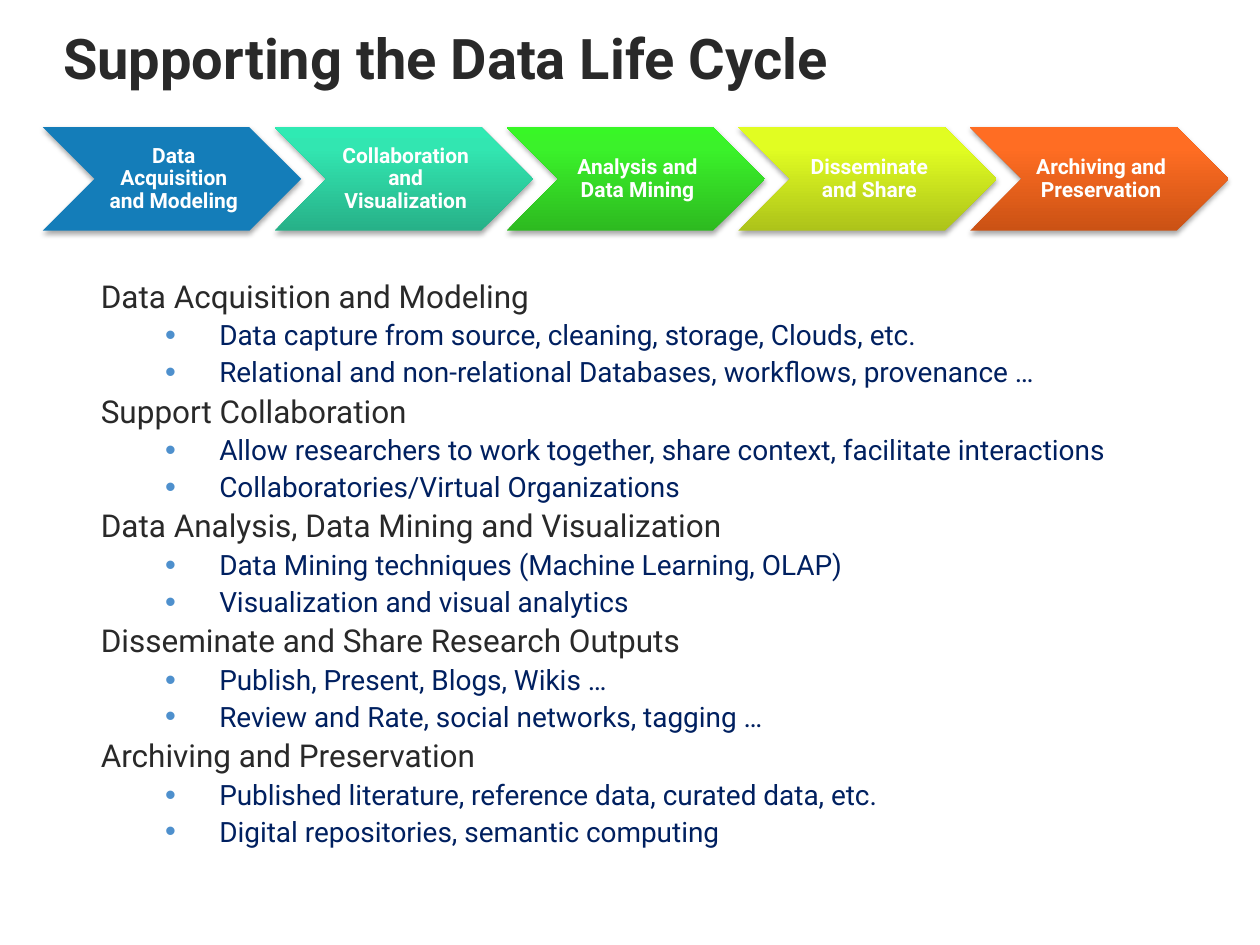
import copy
from dataclasses import dataclass

import lxml.etree
import pptx
import pptx.dml.color
import pptx.enum.shapes
import pptx.enum.text
import pptx.oxml.ns
import pptx.util

Inches = pptx.util.Inches
Pt = pptx.util.Pt
qn = pptx.oxml.ns.qn
Anchor = pptx.enum.text.MSO_ANCHOR
Align = pptx.enum.text.PP_ALIGN


@dataclass(frozen=True)
class Theme:
    font: str = "Roboto"
    dark: str = "292929"
    navy: str = "002060"
    white: str = "FFFFFF"
    bullet: str = "4E90CD"
    shade: str = "000000"
    title: int = 32
    head: int = 18
    item: int = 16
    label: int = 12
    leading: float = 0.9


THEME = Theme()

# Label and fill: one colour, or the gradient stops from bottom to top
STEPS = [
    ("Data Acquisition and Modeling", ["147DB9"]),
    ("Collaboration and Visualization", ["27B188", "32E6B1", "2FEAB3"]),
    ("Analysis and Data Mining", ["2DBA20", "3BF22A", "38F726"]),
    ("Disseminate and Share", ["ADC31A", "E1FD22", "E3FF21"]),
    ("Archiving and Preservation", ["CB5214", "FF6D23", "FF6E24"]),
]

TOPICS = [
    ("Data Acquisition and Modeling",
     ["Data capture from source, cleaning, storage, Clouds, etc.",
      "Relational and non-relational Databases, workflows, provenance …"]),
    ("Support Collaboration",
     ["Allow researchers to work together, share context, facilitate interactions",
      "Collaboratories/Virtual Organizations"]),
    ("Data Analysis, Data Mining and Visualization",
     ["Data Mining techniques (Machine Learning, OLAP)",
      "Visualization and visual analytics"]),
    ("Disseminate and Share Research Outputs",
     ["Publish, Present, Blogs, Wikis …",
      "Review and Rate, social networks, tagging …"]),
    ("Archiving and Preservation",
     ["Published literature, reference data, curated data, etc.",
      "Digital repositories, semantic computing"]),
]


def rgb(code):
    return pptx.dml.color.RGBColor.from_string(code)


def add_xml(parent, tag, **attrs):
    node = lxml.etree.SubElement(parent, qn(tag))
    for key, value in attrs.items():
        node.set(key, str(value))
    return node


def set_frame(frame, insets=(0, 0, 0, 0), anchor=Anchor.TOP, wrap=True):
    frame.margin_left, frame.margin_top, frame.margin_right, frame.margin_bottom = map(
        Inches, insets)
    frame.vertical_anchor = anchor
    frame.word_wrap = wrap
    frame.auto_size = pptx.enum.text.MSO_AUTO_SIZE.NONE


def style(para, size, color, bold=False, align=Align.LEFT):
    para.alignment = align
    para.line_spacing = THEME.leading
    for run in para.runs:
        font = run.font
        font.name, font.size, font.bold = THEME.font, Pt(size), bold
        font.color.rgb = rgb(color)


def indent(para, left, hang):
    props = para._p.get_or_add_pPr()
    props.set("marL", str(Inches(left)))
    props.set("indent", str(-Inches(hang)))
    return props


def add_bullet(para):
    props = indent(para, 0.94, 0.43)
    add_xml(add_xml(props, "a:buClr"), "a:srgbClr", val=THEME.bullet)
    add_xml(props, "a:buSzPct", val=110000)
    add_xml(props, "a:buFont", typeface="Arial")
    add_xml(props, "a:buChar", char="•")


def paint(shape, colors):
    fill = shape.fill
    if len(colors) == 1:
        fill.solid()
        fill.fore_color.rgb = rgb(colors[0])
        return
    fill.gradient()
    fill.gradient_angle = 90
    stops = shape._element.spPr.find(".//" + qn("a:gsLst"))
    stops.append(copy.deepcopy(stops[-1]))
    for stop, spot, color in zip(fill.gradient_stops, (0, 0.8, 1), colors):
        stop.position = spot
        stop.color.rgb = rgb(color)


def drop_shadow(shape):
    shape.shadow.inherit = False
    effects = shape._element.spPr.find(qn("a:effectLst"))
    outer = add_xml(effects, "a:outerShdw", blurRad=Pt(3.1), dist=Pt(1.8),
                    dir=5400000, rotWithShape=0)
    add_xml(add_xml(outer, "a:srgbClr", val=THEME.shade), "a:alpha", val=35000)


def add_title(slide, left, top, width, height):
    title = slide.shapes.title
    title.left, title.top, title.width, title.height = map(
        Inches, (left, top, width, height))
    title.text_frame.text = "Supporting the Data Life Cycle"
    set_frame(title.text_frame, wrap=False)
    style(title.text_frame.paragraphs[0], THEME.title, THEME.dark, bold=True)


def add_steps(slide, left, top, width, height):
    """Lay overlapping chevrons across the box, each with a centred label."""
    wide, tall = 2.05, Inches(height)
    pitch = (width - wide) / (len(STEPS) - 1)
    for i, (text, colors) in enumerate(STEPS):
        x = left + i * pitch
        arrow = slide.shapes.add_shape(
            pptx.enum.shapes.MSO_SHAPE.CHEVRON,
            Inches(x), Inches(top), Inches(wide), tall)
        paint(arrow, colors)
        arrow.line.fill.background()
        drop_shadow(arrow)

        label = slide.shapes.add_textbox(
            Inches(x + wide / 5), Inches(top), Inches(wide * 0.6), tall)
        frame = label.text_frame
        frame.text = text
        set_frame(frame, (0.05, 0.02, 0.02, 0.02), Anchor.MIDDLE)
        style(frame.paragraphs[0], THEME.label, THEME.white, True, Align.CENTER)


def add_topics(slide, left, top, width, height):
    box = slide.shapes.add_textbox(*map(Inches, (left, top, width, height)))
    frame = box.text_frame
    set_frame(frame)
    for i, (head, items) in enumerate(TOPICS):
        para = frame.add_paragraph() if i else frame.paragraphs[0]
        para.text = head
        indent(para, 0.5, 0.5)
        if i:
            para.space_before = Pt(4.2)
        style(para, THEME.head, THEME.dark)
        for item in items:
            para = frame.add_paragraph()
            para.text = item
            para.level = 1
            add_bullet(para)
            para.space_before = Pt(3.75)
            style(para, THEME.item, THEME.navy)


def main():
    deck = pptx.Presentation()
    deck.slide_width, deck.slide_height = Inches(10), Inches(7.5)
    slide = deck.slides.add_slide(deck.slide_layouts.get_by_name("Title Only"))
    add_title(slide, 0.5, 0.25, 6.46, 0.48)
    add_steps(slide, 0.34, 1.01, 9.41, 0.82)
    add_topics(slide, 0.8, 2.23, 8.95, 4.58)
    deck.save("out.pptx")


if __name__ == "__main__":
    main()
